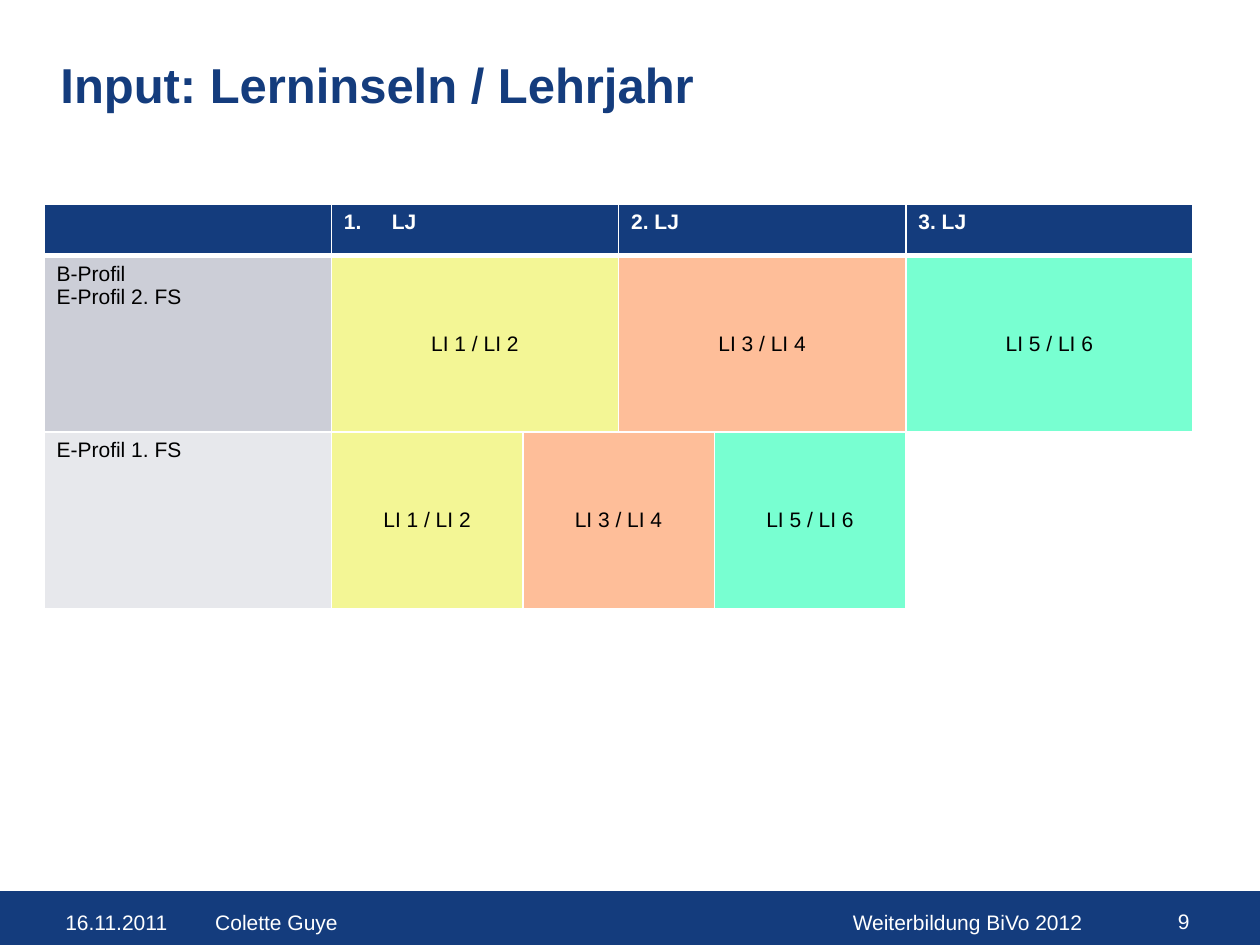
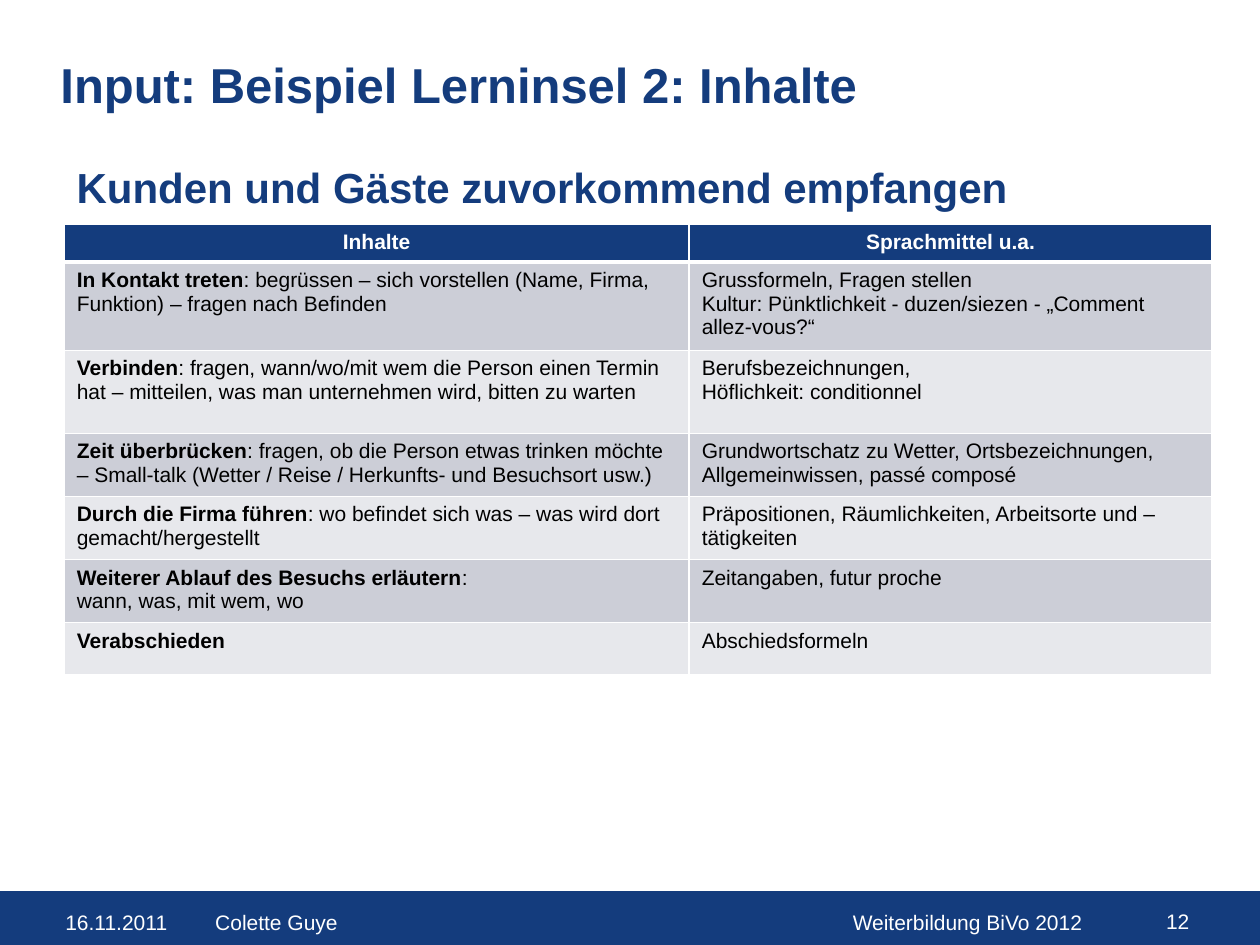
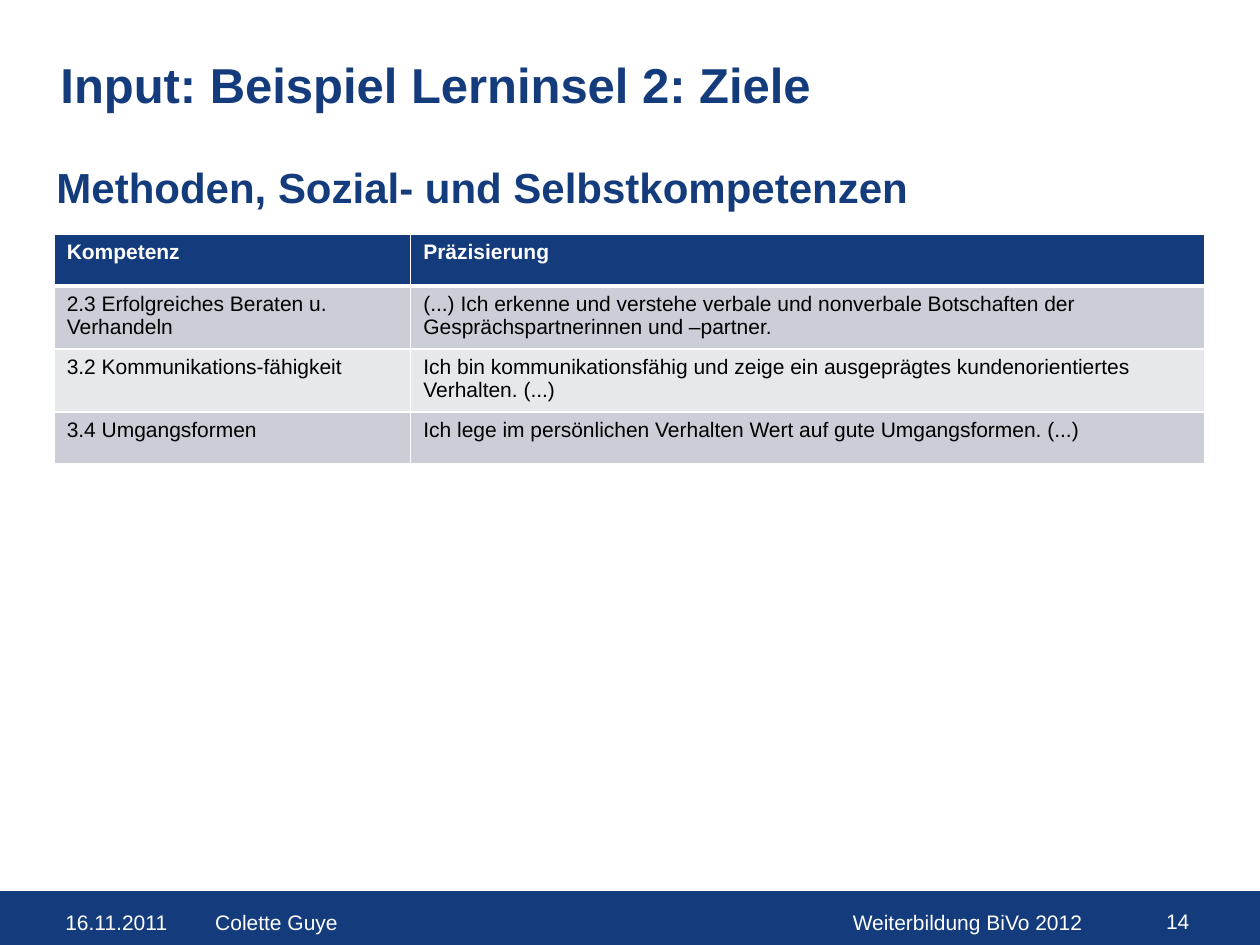
from dataclasses import dataclass
from itertools import pairwise

from lxml.etree import SubElement
from pptx import Presentation
from pptx.dml.color import RGBColor
from pptx.enum.shapes import MSO_SHAPE
from pptx.enum.text import MSO_ANCHOR, MSO_AUTO_SIZE, PP_ALIGN
from pptx.oxml.ns import qn
from pptx.util import Inches, Pt


@dataclass(frozen=True)
class Theme:
    font: str = "Arial"
    navy: str = "143C7D"
    white: str = "FFFFFF"
    black: str = "000000"
    band_dark: str = "CCCED7"
    band_light: str = "E7E8EC"
    yellow: str = "F3F695"
    peach: str = "FEBE99"
    mint: str = "78FFD1"
    title_size: int = 28
    heading_size: int = 24
    text_size: int = 12
    grid_line: int = 1
    header_line: int = 3


THEME = Theme()
TITLE_BOX = (0.38, 0.38, 7.3, 0.93)
FOOTER_BOX = (-0.04, 7.08, 10.04, 0.42)

ISLANDS = [
    ("LI 1 / LI 2", THEME.yellow),
    ("LI 3 / LI 4", THEME.peach),
    ("LI 5 / LI 6", THEME.mint),
]
YEAR_COLUMNS = [2.28, 1.52, 0.76, 0.76, 1.52, 2.28]
YEAR_STARTS = [1, 3, 5, 6]
FAST_STARTS = [1, 2, 4, 5]

CONTENTS = [
    ["Inhalte", "Sprachmittel u.a."],
    [("In Kontakt treten", ": begrüssen – sich vorstellen (Name, Firma, Funktion) – fragen nach Befinden"),
     "Grussformeln, Fragen stellen\nKultur: Pünktlichkeit - duzen/siezen - „Comment allez-vous?“"],
    [("Verbinden", ": fragen, wann/wo/mit wem die Person einen Termin hat – mitteilen, "
      "was man unternehmen wird, bitten zu warten"),
     "Berufsbezeichnungen,\nHöflichkeit: conditionnel"],
    [("Zeit überbrücken", ": fragen, ob die Person etwas trinken möchte – Small-talk "
      "(Wetter / Reise / Herkunfts- und Besuchsort usw.)"),
     "Grundwortschatz zu Wetter, Ortsbezeichnungen, Allgemeinwissen, passé composé"],
    [("Durch die Firma führen", ": wo befindet sich was – was wird dort gemacht/hergestellt"),
     "Präpositionen, Räumlichkeiten, Arbeitsorte und –tätigkeiten"],
    [("Weiterer Ablauf des Besuchs erläutern", ":\nwann, was, mit wem, wo"),
     "Zeitangaben, futur proche"],
    [("Verabschieden", ""), "Abschiedsformeln"],
]

COMPETENCES = [
    ["Kompetenz", "Präzisierung"],
    ["2.3 Erfolgreiches Beraten u. Verhandeln",
     "(...) Ich erkenne und verstehe verbale und nonverbale Botschaften der "
     "Gesprächspartnerinnen und –partner."],
    ["3.2 Kommunikations-fähigkeit",
     "Ich bin kommunikationsfähig und zeige ein ausgeprägtes kundenorientiertes Verhalten. (...)"],
    ["3.4 Umgangsformen",
     "Ich lege im persönlichen Verhalten Wert auf gute Umgangsformen. (...)"],
]


def rgb(color):
    return RGBColor.from_string(color)


def style_paragraph(paragraph, size, color, bold=False, align=PP_ALIGN.LEFT):
    paragraph.alignment = align
    font = paragraph.font
    font.name = THEME.font
    font.size = Pt(size)
    font.bold = bold
    font.color.rgb = rgb(color)


def add_label(slide, box, text, size, color, bold=False, align=PP_ALIGN.LEFT):
    frame = slide.shapes.add_textbox(*map(Inches, box)).text_frame
    frame.word_wrap = True
    frame.text = text
    style_paragraph(frame.paragraphs[0], size, color, bold, align)
    return frame


def add_title(slide, box, text):
    title = slide.shapes.title
    title.left, title.top, title.width, title.height = map(Inches, box)
    frame = title.text_frame
    frame.text = text
    frame.auto_size = MSO_AUTO_SIZE.NONE
    frame.vertical_anchor = MSO_ANCHOR.TOP
    style_paragraph(frame.paragraphs[0], THEME.title_size, THEME.navy, bold=True)


def add_footer(slide, box, number):
    left, top, _, _ = box
    band = slide.shapes.add_shape(MSO_SHAPE.RECTANGLE, *map(Inches, box))
    band.shadow.inherit = False
    band.fill.solid()
    band.fill.fore_color.rgb = rgb(THEME.navy)
    band.line.color.rgb = rgb(THEME.navy)
    band.line.width = Pt(0.75)
    for offset, width, text in [
        (0.46, 1.08, "16.11.2011"),
        (1.65, 4.72, "Colette Guye"),
        (6.71, 2.33, "Weiterbildung BiVo 2012"),
    ]:
        add_label(slide, (left + offset, top + 0.09, width, 0.32), text,
                  THEME.text_size, THEME.white)
    page = add_label(slide, (left + 9.04, top + 0.08, 0.58, 0.34), str(number),
                     THEME.text_size, THEME.white, align=PP_ALIGN.RIGHT)
    page.margin_right = Inches(0.14)


def add_borders(cell, row):
    properties = cell._tc.get_or_add_tcPr()
    widths = {
        "lnL": THEME.grid_line,
        "lnR": THEME.grid_line,
        "lnT": THEME.header_line if row == 1 else THEME.grid_line,
        "lnB": THEME.header_line if row == 0 else THEME.grid_line,
    }
    for position, (side, width) in enumerate(widths.items()):
        line = SubElement(properties, qn(f"a:{side}"), w=str(Pt(width)))
        fill = SubElement(line, qn("a:solidFill"))
        SubElement(fill, qn("a:srgbClr"), val=THEME.white)
        properties.remove(line)
        properties.insert(position, line)


def fill_cell(cell, color):
    cell.fill.solid()
    cell.fill.fore_color.rgb = rgb(color)


def write_cell(cell, content, color=THEME.black, bold=False, align=PP_ALIGN.LEFT):
    lead, rest = content if isinstance(content, tuple) else ("", content)
    first, *others = rest.split("\n")
    frame = cell.text_frame
    paragraph = frame.paragraphs[0]
    if lead:
        run = paragraph.add_run()
        run.text = lead
        run.font.bold = True
    if first:
        paragraph.add_run().text = first
    for line in others:
        frame.add_paragraph().text = line
    for paragraph in frame.paragraphs:
        style_paragraph(paragraph, THEME.text_size, color, bold, align)


def add_grid(slide, left, top, columns, rows):
    table = slide.shapes.add_table(
        len(rows), len(columns), Inches(left), Inches(top),
        Inches(sum(columns)), Inches(sum(rows))).table
    table.horz_banding = False
    for column, width in zip(table.columns, columns):
        column.width = Inches(width)
    for index, (row, height) in enumerate(zip(table.rows, rows)):
        row.height = Inches(height)
        band = THEME.band_dark if index % 2 else THEME.band_light
        for cell in row.cells:
            fill_cell(cell, band if index else THEME.navy)
            add_borders(cell, index)
    return table


def add_text_table(slide, left, top, columns, rows, contents, header_align=PP_ALIGN.LEFT):
    table = add_grid(slide, left, top, columns, rows)
    for index, line in enumerate(contents):
        for column, content in enumerate(line):
            cell = table.cell(index, column)
            if index == 0:
                write_cell(cell, content, THEME.white, True, header_align)
            else:
                write_cell(cell, content)


def merged_cells(table, row, starts):
    for start, end in pairwise(starts):
        cell = table.cell(row, start)
        if end - start > 1:
            cell.merge(table.cell(row, end - 1))
        yield cell


def number_paragraph(paragraph):
    properties = paragraph._p.get_or_add_pPr()
    properties.set("marL", str(Inches(0.38)))
    properties.set("indent", str(-Inches(0.38)))
    SubElement(properties, qn("a:buFont"), typeface=THEME.font)
    SubElement(properties, qn("a:buAutoNum"), type="arabicPeriod")


def add_year_table(slide, left, top):
    table = add_grid(slide, left, top, YEAR_COLUMNS, [0.41, 1.4, 1.4])
    years = merged_cells(table, 0, YEAR_STARTS)
    for year, cell in zip(["LJ", "2. LJ", "3. LJ"], years):
        if year == "LJ":
            number_paragraph(cell.text_frame.paragraphs[0])
        write_cell(cell, year, THEME.white, bold=True)
    profiles = [("B-Profil\nE-Profil 2. FS", YEAR_STARTS), ("E-Profil 1. FS", FAST_STARTS)]
    for row, (profile, starts) in enumerate(profiles, 1):
        write_cell(table.cell(row, 0), profile)
        for (island, color), cell in zip(ISLANDS, merged_cells(table, row, starts)):
            fill_cell(cell, color)
            cell.vertical_anchor = MSO_ANCHOR.MIDDLE
            write_cell(cell, island, align=PP_ALIGN.CENTER)
    table.cell(2, 5).fill.background()


def add_page(deck, title, number):
    slide = deck.slides.add_slide(deck.slide_layouts.get_by_name("Title Only"))
    add_footer(slide, FOOTER_BOX, number)
    add_title(slide, TITLE_BOX, title)
    return slide


def add_heading(slide, left, text):
    add_label(slide, (left, 1.23, 7.64, 0.5), text, THEME.heading_size, THEME.navy, bold=True)


def main():
    deck = Presentation()
    deck.slide_width, deck.slide_height = Inches(10), Inches(7.5)

    years = add_page(deck, "Input: Lerninseln / Lehrjahr", 9)
    add_year_table(years, 0.35, 1.62)

    contents = add_page(deck, "Input: Beispiel Lerninsel 2: Inhalte", 12)
    add_text_table(contents, 0.51, 1.78, [4.96, 4.15],
                   [0.29, 0.66, 0.66, 0.47, 0.47, 0.47, 0.41],
                   CONTENTS, PP_ALIGN.CENTER)
    add_heading(contents, 0.51, "Kunden und Gäste zuvorkommend empfangen")

    goals = add_page(deck, "Input: Beispiel Lerninsel 2: Ziele", 14)
    add_text_table(goals, 0.43, 1.86, [2.83, 6.3], [0.41, 0.47, 0.47, 0.41], COMPETENCES)
    add_heading(goals, 0.35, "Methoden, Sozial- und Selbstkompetenzen")

    deck.save("out.pptx")


if __name__ == "__main__":
    main()
